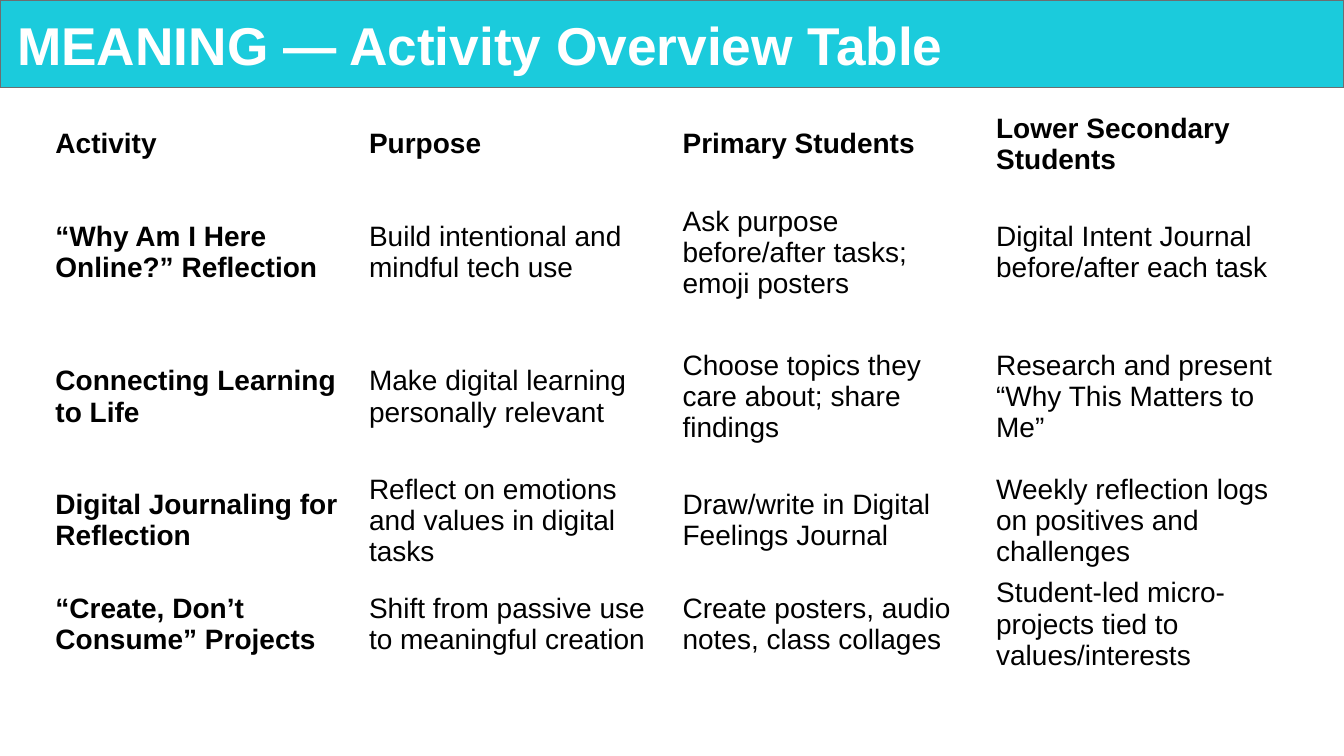
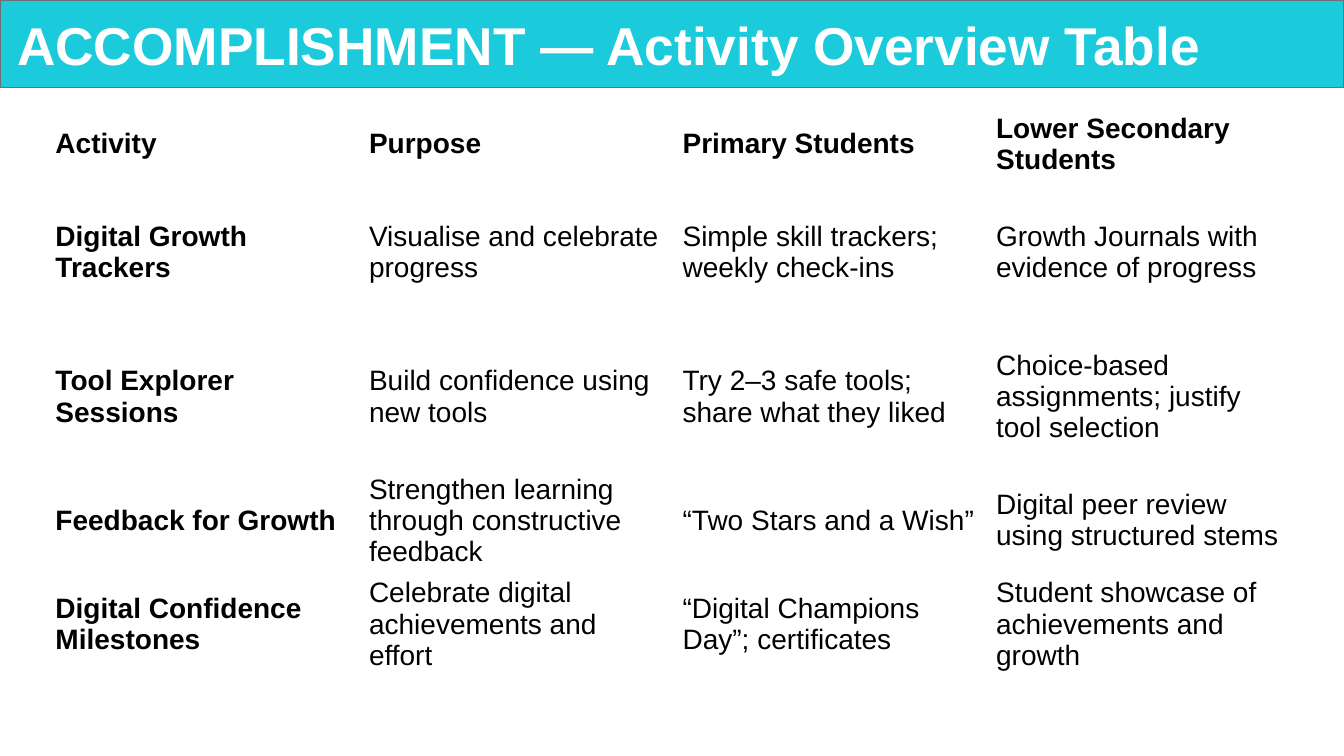
from pptx import Presentation
from pptx.dml.color import RGBColor
from pptx.enum.shapes import MSO_SHAPE
from pptx.enum.text import MSO_ANCHOR, MSO_AUTO_SIZE, PP_ALIGN
from pptx.util import Inches, Pt

COLORS = {"band": "1BCBDC", "band_line": "6C6E70", "title": "FFFFFF", "text": "000000"}
FONT = "Arial"
SLIDE_WIDTH, SLIDE_HEIGHT = 13.33, 7.5
BAND_HEIGHT = 0.87
COLUMN_WIDTH = 3.11
ROW_HEIGHTS = [0.6, 1.43, 1.43, 1.01, 1.01]
HEADINGS = ["Activity", "Purpose", "Primary Students", "Lower Secondary Students"]

OVERVIEWS = {
    "MEANING": [
        ["“Why Am I Here Online?” Reflection",
         "Build intentional and mindful tech use",
         "Ask purpose before/after tasks; emoji posters",
         "Digital Intent Journal before/after each task"],
        ["Connecting Learning to Life",
         "Make digital learning personally relevant",
         "Choose topics they care about; share findings",
         "Research and present “Why This Matters to Me”"],
        ["Digital Journaling for Reflection",
         "Reflect on emotions and values in digital tasks",
         "Draw/write in Digital Feelings Journal",
         "Weekly reflection logs on positives and challenges"],
        ["“Create, Don’t Consume” Projects",
         "Shift from passive use to meaningful creation",
         "Create posters, audio notes, class collages",
         "Student-led micro-projects tied to values/interests"],
    ],
    "ACCOMPLISHMENT": [
        ["Digital Growth Trackers",
         "Visualise and celebrate progress",
         "Simple skill trackers; weekly check-ins",
         "Growth Journals with evidence of progress"],
        ["Tool Explorer Sessions",
         "Build confidence using new tools",
         "Try 2–3 safe tools; share what they liked",
         "Choice-based assignments; justify tool selection"],
        ["Feedback for Growth",
         "Strengthen learning through constructive feedback",
         "“Two Stars and a Wish”",
         "Digital peer review using structured stems"],
        ["Digital Confidence Milestones",
         "Celebrate digital achievements and effort",
         "“Digital Champions Day”; certificates",
         "Student showcase of achievements and growth"],
    ],
}


def rgb(role):
    return RGBColor.from_string(COLORS[role])


def add_run(paragraph, text, size, role, bold):
    run = paragraph.add_run()
    run.text = text
    run.font.name = FONT
    run.font.size = Pt(size)
    run.font.bold = bold
    run.font.color.rgb = rgb(role)


def move_band_to_layout(slide, layout):
    band = slide.shapes.add_shape(
        MSO_SHAPE.RECTANGLE, 0, 0, Inches(SLIDE_WIDTH), Inches(BAND_HEIGHT))
    band.shadow.inherit = False
    band.fill.solid()
    band.fill.fore_color.rgb = rgb("band")
    band.line.color.rgb = rgb("band_line")
    band.line.width = Pt(1)
    layout.shapes.element.insert(2, band.element)


def set_title(slide, text):
    title = slide.shapes.title
    title.left, title.top = Inches(0.11), Inches(0.09)
    title.width, title.height = Inches(13.06), Inches(0.78)
    frame = title.text_frame
    frame.word_wrap = True
    frame.auto_size = MSO_AUTO_SIZE.NONE
    frame.vertical_anchor = MSO_ANCHOR.MIDDLE
    frame.margin_left = frame.margin_right = Inches(0.06)
    frame.margin_top = frame.margin_bottom = Inches(0.06)
    heading = frame.paragraphs[0]
    heading.alignment = PP_ALIGN.LEFT
    heading.line_spacing = 0.9
    add_run(heading, text, 38, "title", True)


def add_activity_table(slide, activities):
    rows = [HEADINGS] + activities
    table = slide.shapes.add_table(
        len(rows), len(HEADINGS), Inches(0.45), Inches(1.07),
        Inches(COLUMN_WIDTH * len(HEADINGS)), Inches(sum(ROW_HEIGHTS))).table
    table.first_row = table.horz_banding = False
    for column in table.columns:
        column.width = Inches(COLUMN_WIDTH)
    for row_index, (texts, height) in enumerate(zip(rows, ROW_HEIGHTS)):
        table.rows[row_index].height = Inches(height)
        for column_index, text in enumerate(texts):
            cell = table.cell(row_index, column_index)
            cell.fill.background()
            cell.vertical_anchor = MSO_ANCHOR.MIDDLE
            bold = row_index == 0 or column_index == 0
            add_run(cell.text_frame.paragraphs[0], text, 20, "text", bold)


def main():
    deck = Presentation()
    deck.slide_width, deck.slide_height = Inches(SLIDE_WIDTH), Inches(SLIDE_HEIGHT)
    layout = deck.slide_layouts.get_by_name("Title Only")
    for theme, activities in OVERVIEWS.items():
        slide = deck.slides.add_slide(layout)
        set_title(slide, f"{theme} — Activity Overview Table")
        add_activity_table(slide, activities)
    move_band_to_layout(deck.slides[0], layout)
    deck.save("out.pptx")


if __name__ == "__main__":
    main()
